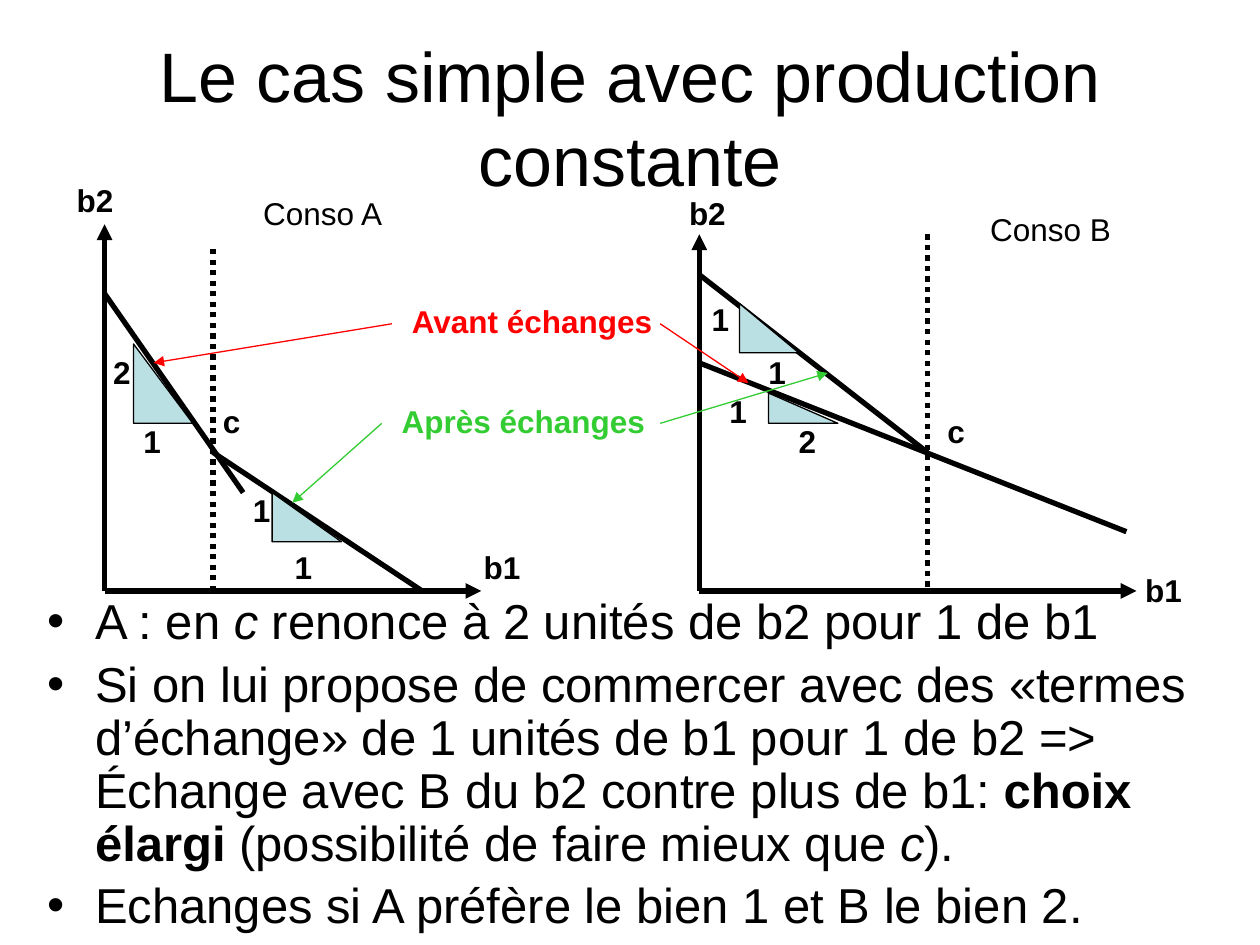
from lxml.etree import SubElement
from pptx import Presentation
from pptx.dml.color import RGBColor
from pptx.enum.dml import MSO_LINE
from pptx.enum.shapes import MSO_CONNECTOR, MSO_SHAPE
from pptx.enum.text import MSO_ANCHOR, MSO_AUTO_SIZE, PP_ALIGN
from pptx.oxml.ns import qn
from pptx.util import Pt

EMU_PER_PX = 9144  # 100 px to the inch
COLORS = {"ink": "000000", "triangle": "BBE0E3", "before": "FF0000", "after": "33CC33"}
FONT = "Arial"
AXIS_WIDTH, THIN_WIDTH = 3, 0.75
LABEL_HEIGHT = 40


def px(*lengths):
    return [length * EMU_PER_PX for length in lengths]


def rgb(name):
    return RGBColor.from_string(COLORS[name])


class SlideBuilder:
    """Holds the style and the slide being drawn."""

    def __init__(self, page):
        self.page = page

    def span(self, para, text, size, color="ink", bold=False, italic=False):
        span = para.add_run()
        span.text = text
        span.font.name = FONT
        span.font.size = Pt(size)
        span.font.bold = bold
        span.font.italic = italic
        span.font.color.rgb = rgb(color)

    def placeholder(self, index, bounds, anchor):
        box = self.page.placeholders[index]
        box.left, box.top, box.width, box.height = px(*bounds)
        box.text_frame.auto_size = MSO_AUTO_SIZE.NONE
        box.text_frame.vertical_anchor = anchor
        return box.text_frame

    def title(self, text, bounds):
        para = self.placeholder(0, bounds, MSO_ANCHOR.MIDDLE).paragraphs[0]
        para.alignment = PP_ALIGN.CENTER
        self.span(para, text, 40)

    def bullets(self, items, bounds):
        """Each item is a list of (text, style) pairs."""
        frame = self.placeholder(1, bounds, MSO_ANCHOR.TOP)
        for number, item in enumerate(items):
            para = frame.add_paragraph() if number else frame.paragraphs[0]
            para.line_spacing = 0.9
            for text, style in item:
                self.span(para, text, 28, **style)

    def label(self, text, left, top, width=34, color="ink", bold=True):
        box = self.page.shapes.add_textbox(*px(left, top, width, LABEL_HEIGHT))
        frame = box.text_frame
        frame.word_wrap = False
        frame.auto_size = MSO_AUTO_SIZE.SHAPE_TO_FIT_TEXT
        self.span(frame.paragraphs[0], text, 18, color, bold)

    def line(self, start, end, color="ink", width=AXIS_WIDTH, arrow=False, dotted=False):
        line = self.page.shapes.add_connector(MSO_CONNECTOR.STRAIGHT, *px(*start, *end))
        line.line.color.rgb = rgb(color)
        line.line.width = Pt(width)
        if dotted:
            line.line.dash_style = MSO_LINE.ROUND_DOT
        if arrow:
            SubElement(line.line._get_or_add_ln(), qn("a:tailEnd"), type="triangle")
        SubElement(line._element.spPr, qn("a:effectLst"))

    def slope_triangle(self, left, top, width, height):
        triangle = self.page.shapes.add_shape(
            MSO_SHAPE.RIGHT_TRIANGLE, *px(left, top, width, height))
        triangle.shadow.inherit = False
        triangle.fill.solid()
        triangle.fill.fore_color.rgb = rgb("triangle")
        triangle.line.color.rgb = rgb("ink")
        triangle.line.width = Pt(THIN_WIDTH)

    def graph(self, origin, axis_top, axis_right, dotted, budgets, triangles, labels):
        """Draw one consumer: axes, budget lines, slope triangles and labels."""
        self.line(origin, (origin[0], axis_top), arrow=True)
        self.line(origin, (axis_right, origin[1]), arrow=True)
        for start, end in budgets:
            self.line(start, end)
        self.line(*dotted, dotted=True)
        for bounds in triangles:
            self.slope_triangle(*bounds)
        for label in labels:
            self.label(*label)

    def legend(self, text, left, top, width, color, arrows):
        self.label(text, left, top, width, color)
        for start, end in arrows:
            self.line(start, end, color, THIN_WIDTH, arrow=True)


def main():
    deck = Presentation()
    deck.slide_width, deck.slide_height = px(1000, 750)
    slide = SlideBuilder(deck.slides.add_slide(deck.slide_layouts[1]))
    plain, italic, bold = {}, {"italic": True}, {"bold": True}

    slide.title("Le cas simple avec production constante", (50, 30, 900, 125))
    slide.bullets([
        [("A : en ", plain), ("c ", italic),
         ("renonce à 2 unités de b2 pour 1 de b1", plain)],
        [("Si on lui propose de commercer avec des «termes d’échange» de 1 unités "
          "de b1 pour 1 de b2 => Échange avec B du b2 contre plus de b1: ", plain),
         ("choix élargi", bold), (" (possibilité de faire mieux que ", plain),
         ("c", italic), (").", plain)],
        [("Echanges si A préfère le bien 1 et B le bien 2.", plain)],
    ], (28, 469, 945, 239))

    slide.graph(
        origin=(83, 469), axis_top=178, axis_right=382,
        dotted=((169, 469), (169, 194)),
        budgets=[((83, 233), (193, 391)), ((169, 359), (335, 469))],
        triangles=[(106, 273, 47, 63), (216, 391, 55, 39)],
        labels=[("b1", 374, 430, 49), ("b2", 51, 139, 49), ("1", 104, 330),
                ("2", 80, 275), ("1", 224, 430), ("1", 191, 385), ("c", 167, 314)])
    slide.graph(
        origin=(555, 469), axis_top=186, axis_right=902,
        dotted=((736, 186), (736, 469)),
        budgets=[((555, 218), (736, 359)), ((555, 288), (894, 422))],
        triangles=[(587, 241, 47, 39), (610, 312, 55, 24)],
        labels=[("b1", 899, 448, 49), ("b2", 537, 149, 49), ("2", 624, 330),
                ("1", 569, 306), ("1", 555, 233), ("1", 600, 275), ("c", 742, 322)])
    slide.label("Conso A", 199, 149, 116, bold=False)
    slide.label("Conso B", 776, 162, 116, bold=False)

    slide.legend("Avant échanges", 317, 235, 212, "before",
                 [((311, 257), (122, 288)), ((524, 257), (594, 304))])
    slide.legend("Après échanges", 309, 314, 213, "after",
                 [((303, 336), (232, 399)), ((524, 336), (657, 296))])
    deck.save("out.pptx")


if __name__ == "__main__":
    main()
